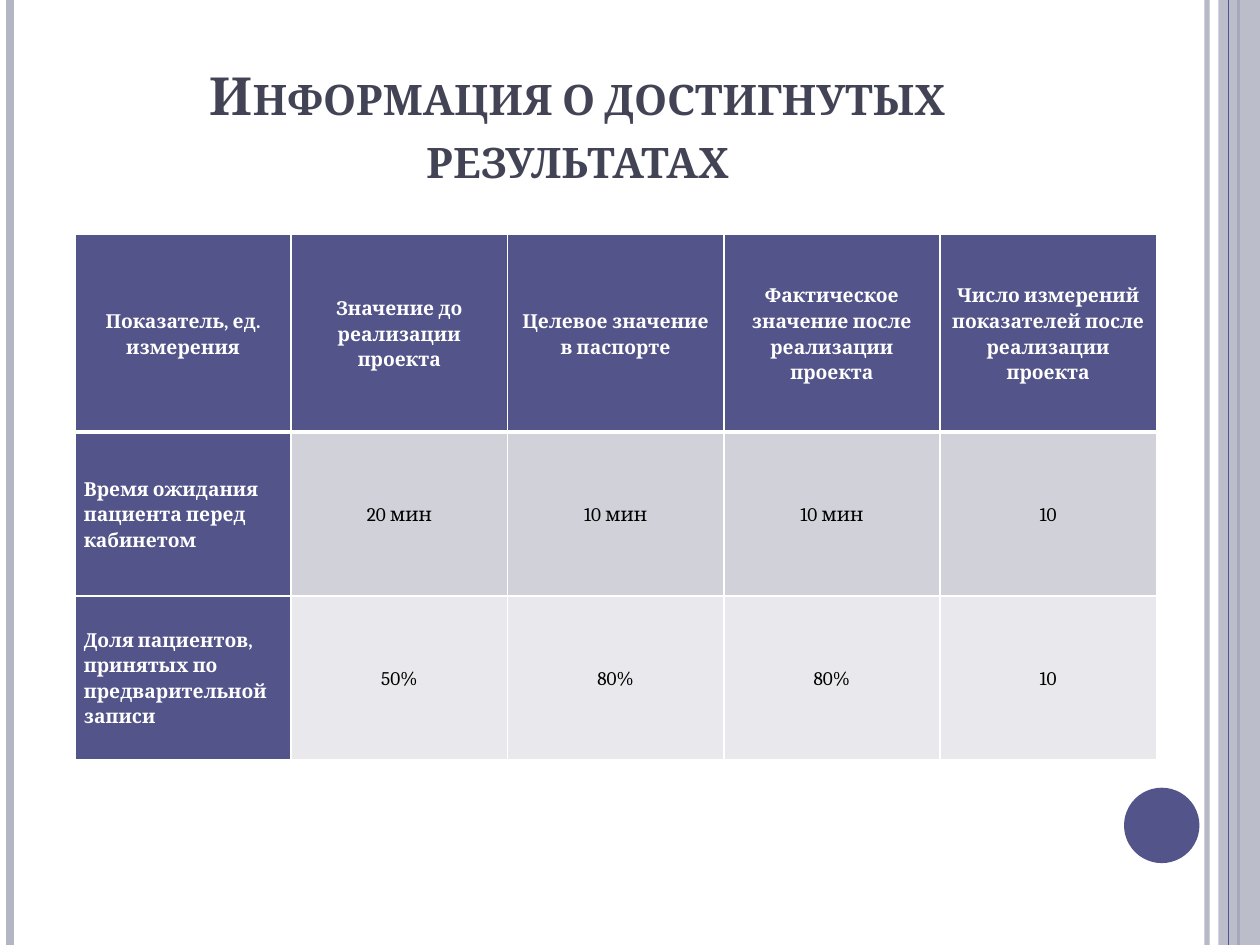
from dataclasses import dataclass

from lxml.etree import SubElement
from pptx import Presentation
from pptx.dml.color import RGBColor
from pptx.enum.shapes import MSO_CONNECTOR, MSO_SHAPE
from pptx.enum.text import MSO_ANCHOR, MSO_AUTO_SIZE, PP_ALIGN
from pptx.oxml.ns import qn
from pptx.util import Cm, Pt


@dataclass(frozen=True)
class Theme:
    font: str = "Cambria"
    title_size: float = 30
    table_size: float = 11
    title: str = "424456"
    accent: str = "53548A"
    stripe: str = "B3B4C4"
    white: str = "FFFFFF"
    black: str = "000000"
    bands: tuple = ("D1D1DA", "E9E9ED")


THEME = Theme()
PAGE_WIDTH, PAGE_HEIGHT = 25.4, 19.05
TITLE = "Информация о достигнутых результатах"
ROWS = [
    ["Показатель, ед. измерения", "Значение до реализации проекта",
     "Целевое значение в паспорте",
     "Фактическое значение после реализации проекта",
     "Число измерений показателей после реализации проекта"],
    ["Время ожидания пациента перед кабинетом",
     "20 мин", "10 мин", "10 мин", "10"],
    ["Доля пациентов, принятых по предварительной записи",
     "50%", "80%", "80%", "10"],
]
ROW_HEIGHTS = [3.98, 3.3, 3.3]
COLUMN_WIDTH = 4.36


def set_opacity(fill_parent, percent):
    color = fill_parent.find(qn("a:solidFill"))[0]
    SubElement(color, qn("a:alpha"), val=str(percent * 1000))


def add_stripe(page, x, width, color, opacity=100):
    stripe = page.shapes.add_connector(
        MSO_CONNECTOR.STRAIGHT, Cm(x), Cm(0), Cm(x), Cm(PAGE_HEIGHT))
    stripe.line.width = Pt(width)
    stripe.line.color.rgb = RGBColor.from_string(color)
    properties = stripe._element.spPr
    SubElement(properties, qn("a:effectLst"))
    if opacity < 100:
        set_opacity(properties.find(qn("a:ln")), opacity)


def add_block(page, kind, left, top, width, height, color, opacity=100):
    block = page.shapes.add_shape(kind, Cm(left), Cm(top), Cm(width), Cm(height))
    block.shadow.inherit = False
    block.fill.solid()
    block.fill.fore_color.rgb = RGBColor.from_string(color)
    block.line.fill.background()
    if opacity < 100:
        set_opacity(block._element.spPr, opacity)


def add_span(para, text, size, color, bold):
    span = para.add_run()
    span.text = text
    span.font.name = THEME.font
    span.font.size = Pt(size)
    span.font.bold = bold
    span.font.color.rgb = RGBColor.from_string(color)
    return span


def add_title(page):
    box = page.shapes.title
    box.left, box.top, box.width, box.height = Cm(1.27), Cm(0.76), Cm(20.75), Cm(3.18)
    frame = box.text_frame
    frame.word_wrap = True
    frame.auto_size = MSO_AUTO_SIZE.NONE
    frame.vertical_anchor = MSO_ANCHOR.BOTTOM
    para = frame.paragraphs[0]
    para.alignment = PP_ALIGN.CENTER
    span = add_span(para, TITLE, THEME.title_size, THEME.title, True)
    span.font._element.set("cap", "small")


def add_borders(cell, top, bottom):
    properties = cell._tc.get_or_add_tcPr()
    for side, width in (("L", 1), ("R", 1), ("T", top), ("B", bottom)):
        border = SubElement(properties, qn(f"a:ln{side}"), w=str(Pt(width)))
        fill = SubElement(border, qn("a:solidFill"))
        SubElement(fill, qn("a:srgbClr"), val=THEME.white)


def fill_cell(cell, text, row, column):
    heading = row == 0 or column == 0
    add_borders(cell, 3 if row == 1 else 1, 3 if row == 0 else 1)
    cell.fill.solid()
    cell.fill.fore_color.rgb = RGBColor.from_string(
        THEME.accent if heading else THEME.bands[row - 1])
    cell.margin_left = cell.margin_right = Cm(0.18)
    cell.margin_top = cell.margin_bottom = Cm(0)
    cell.vertical_anchor = MSO_ANCHOR.MIDDLE
    para = cell.text_frame.paragraphs[0]
    para.alignment = PP_ALIGN.LEFT if row and not column else PP_ALIGN.CENTER
    para.line_spacing = 1.15
    add_span(para, text, THEME.table_size,
             THEME.white if heading else THEME.black, heading)


def add_results(page):
    columns = len(ROWS[0])
    table = page.shapes.add_table(
        len(ROWS), columns, Cm(1.51), Cm(4.73),
        Cm(COLUMN_WIDTH * columns), Cm(sum(ROW_HEIGHTS))).table
    for column in table.columns:
        column.width = Cm(COLUMN_WIDTH)
    for row, (height, texts) in enumerate(zip(ROW_HEIGHTS, ROWS)):
        table.rows[row].height = Cm(height)
        for column, text in enumerate(texts):
            fill_cell(table.cell(row, column), text, row, column)


def add_decoration(page):
    add_stripe(page, 24.33, 3, THEME.stripe, 93)
    add_stripe(page, 0.2, 4.5, THEME.stripe)
    add_stripe(page, 24.97, 1.5, THEME.accent)
    add_block(page, MSO_SHAPE.RECTANGLE, 24.56, 0, 0.84, PAGE_HEIGHT,
              THEME.stripe, 87)
    add_stripe(page, 24.77, 0.75, THEME.accent)
    add_block(page, MSO_SHAPE.OVAL, 22.66, 15.88, 1.52, 1.52, THEME.accent)


def main():
    deck = Presentation()
    deck.slide_width, deck.slide_height = Cm(PAGE_WIDTH), Cm(PAGE_HEIGHT)
    page = deck.slides.add_slide(deck.slide_layouts[5])
    add_decoration(page)
    add_title(page)
    add_results(page)
    deck.save("out.pptx")


if __name__ == "__main__":
    main()
